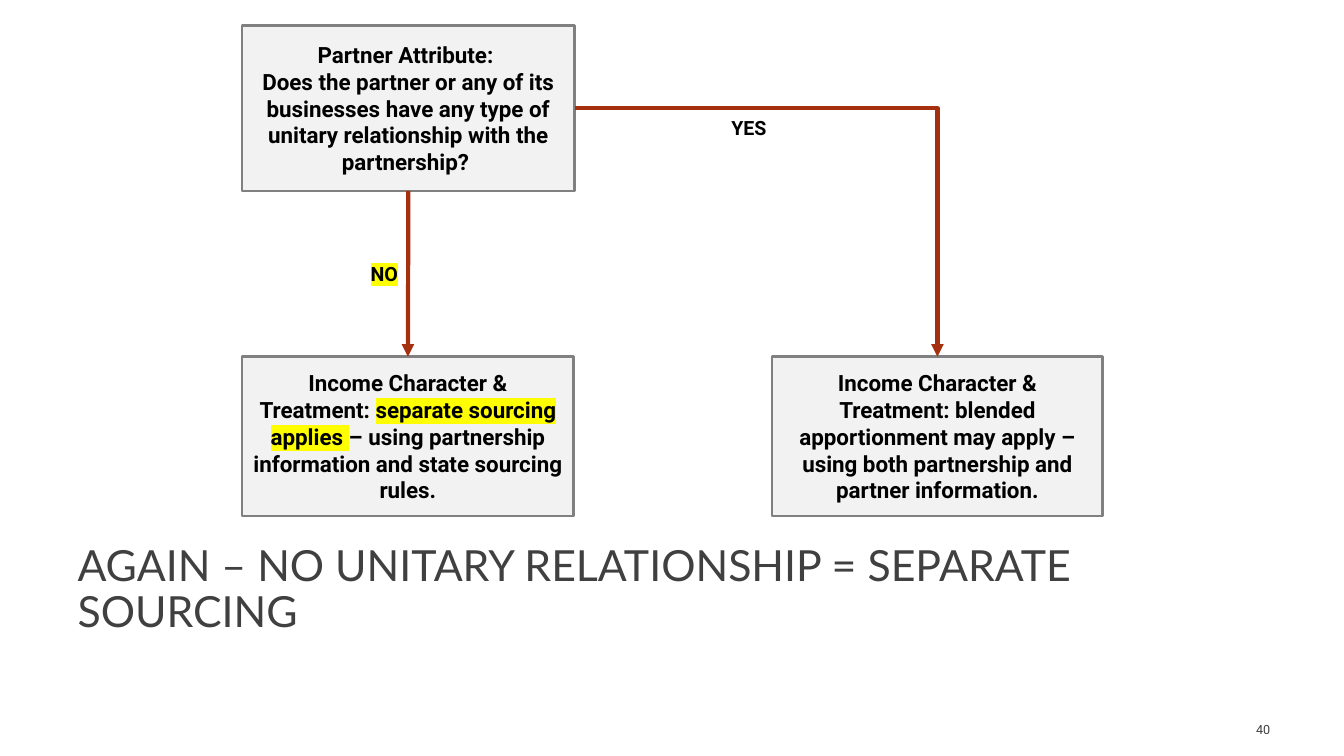
"""Build a decision flow slide on unitary relationships and sourcing."""
import pptx
import pptx.dml.color
import pptx.enum.shapes
import pptx.enum.text
import pptx.oxml
import pptx.oxml.ns
import pptx.util

Cm = pptx.util.Cm
Pt = pptx.util.Pt
ALIGN = pptx.enum.text.PP_ALIGN
ANCHOR = pptx.enum.text.MSO_ANCHOR
CONNECTOR = pptx.enum.shapes.MSO_CONNECTOR
qn = pptx.oxml.ns.qn

COLORS = {"box": "F2F2F2", "border": "808080", "arrow": "A5300F",
          "text": "000000", "muted": "404040", "mark": "FFFF00"}
BOX_FONT = {"name": "Roboto", "size": Pt(16), "bold": True}
LABEL_FONT = {"name": "Roboto", "size": Pt(14), "bold": True}
TITLE_FONT = {"name": "Lato", "size": Pt(30.6), "bold": False}
NUMBER_FONT = {"name": "Roboto", "size": Pt(9), "bold": False}
TOP, RIGHT, BOTTOM = 0, 3, 2


def rgb(key):
    return pptx.dml.color.RGBColor.from_string(COLORS[key])


def add_xml(parent, tag, **attrs):
    el = pptx.oxml.parse_xml(f"<{tag} {pptx.oxml.ns.nsdecls('a')}/>")
    for key, value in attrs.items():
        el.set(key, value)
    parent.append(el)
    return el


def set_attrs(obj, values):
    for key, value in values.items():
        setattr(obj, key, value)


def highlight(r):
    rPr = r.font._element
    mark = add_xml(rPr, "a:highlight")
    add_xml(mark, "a:srgbClr", val=COLORS["mark"])
    rPr.find(qn("a:latin")).addprevious(mark)


def write(sp, parts, font, color="text", frame=None, para=None):
    tf = sp.text_frame
    set_attrs(tf, {"word_wrap": True, **(frame or {})})
    p = tf.paragraphs[0]
    set_attrs(p, para or {})
    for text, marked in parts:
        for i, line in enumerate(text.split("\n")):
            if i:
                p.add_line_break()
            r = p.add_run()
            r.text = line
            r.font.color.rgb = rgb(color)
            set_attrs(r.font, font)
            if marked:
                highlight(r)


def add_box(s, x, y, w, h, *parts):
    sp = s.shapes.add_shape(pptx.enum.shapes.MSO_SHAPE.RECTANGLE,
                            Cm(x), Cm(y), Cm(w), Cm(h))
    sp.shadow.inherit = False
    sp.fill.solid()
    sp.fill.fore_color.rgb = rgb("box")
    sp.line.color.rgb = rgb("border")
    sp.line.width = Pt(1.75)
    write(sp, parts, BOX_FONT, frame={"vertical_anchor": ANCHOR.MIDDLE},
          para={"alignment": ALIGN.CENTER})
    return sp


def add_arrow(s, kind, start, start_site, end):
    cxn = s.shapes.add_connector(kind, 0, 0, 0, 0)
    cxn.begin_connect(start, start_site)
    cxn.end_connect(end, TOP)
    cxn.line.color.rgb = rgb("arrow")
    cxn.line.width = Pt(3)
    add_xml(cxn.line._get_or_add_ln(), "a:tailEnd", type="triangle")
    spPr = cxn._element.spPr
    if kind == CONNECTOR.ELBOW:
        spPr.find(qn("a:prstGeom")).set("prst", "bentConnector2")
    add_xml(spPr, "a:effectLst")


def add_label(s, x, y, w, h, text, marked=False, font=LABEL_FONT, **style):
    sp = s.shapes.add_textbox(Cm(x), Cm(y), Cm(w), Cm(h))
    write(sp, [(text, marked)], font, **style)


def add_title(s, text):
    sp = s.shapes.title
    set_attrs(sp, {"left": Cm(1.7), "top": Cm(14.38),
                   "width": Cm(30.53), "height": Cm(1.8)})
    write(sp, [(text, False)], TITLE_FONT, "muted",
          {"vertical_anchor": ANCHOR.BOTTOM,
           "auto_size": pptx.enum.text.MSO_AUTO_SIZE.NONE},
          {"alignment": ALIGN.LEFT, "line_spacing": 0.9})


def main():
    prs = pptx.Presentation()
    prs.slide_width, prs.slide_height = Cm(33.87), Cm(19.05)
    s = prs.slides.add_slide(prs.slide_layouts[5])
    add_title(s, "AGAIN – NO UNITARY RELATIONSHIP = SEPARATE SOURCING")

    question = add_box(s, 6.1, 0.64, 8.38, 4.17, (
        "Partner Attribute: \nDoes the partner or any of its businesses have "
        "any type of unitary relationship with the partnership? ", False))
    separate = add_box(
        s, 6.1, 8.99, 8.36, 4.01,
        ("Income Character & Treatment: ", False),
        ("separate sourcing applies ", True),
        ("– using partnership information and state sourcing rules.", False))
    blended = add_box(s, 19.46, 8.99, 8.33, 4.01, (
        "Income Character & Treatment: blended apportionment may apply – "
        "using both partnership and partner information.", False))

    add_arrow(s, CONNECTOR.STRAIGHT, question, BOTTOM, separate)
    add_arrow(s, CONNECTOR.ELBOW, question, RIGHT, blended)
    add_label(s, 9.09, 6.48, 1.3, 0.86, "NO", marked=True)
    add_label(s, 18.18, 2.8, 1.6, 0.86, "YES")
    add_label(s, 29.34, 17.86, 2.92, 1.02, "40", font=NUMBER_FONT,
              color="muted", frame={"vertical_anchor": ANCHOR.MIDDLE},
              para={"alignment": ALIGN.RIGHT})
    prs.save("out.pptx")


if __name__ == "__main__":
    main()
